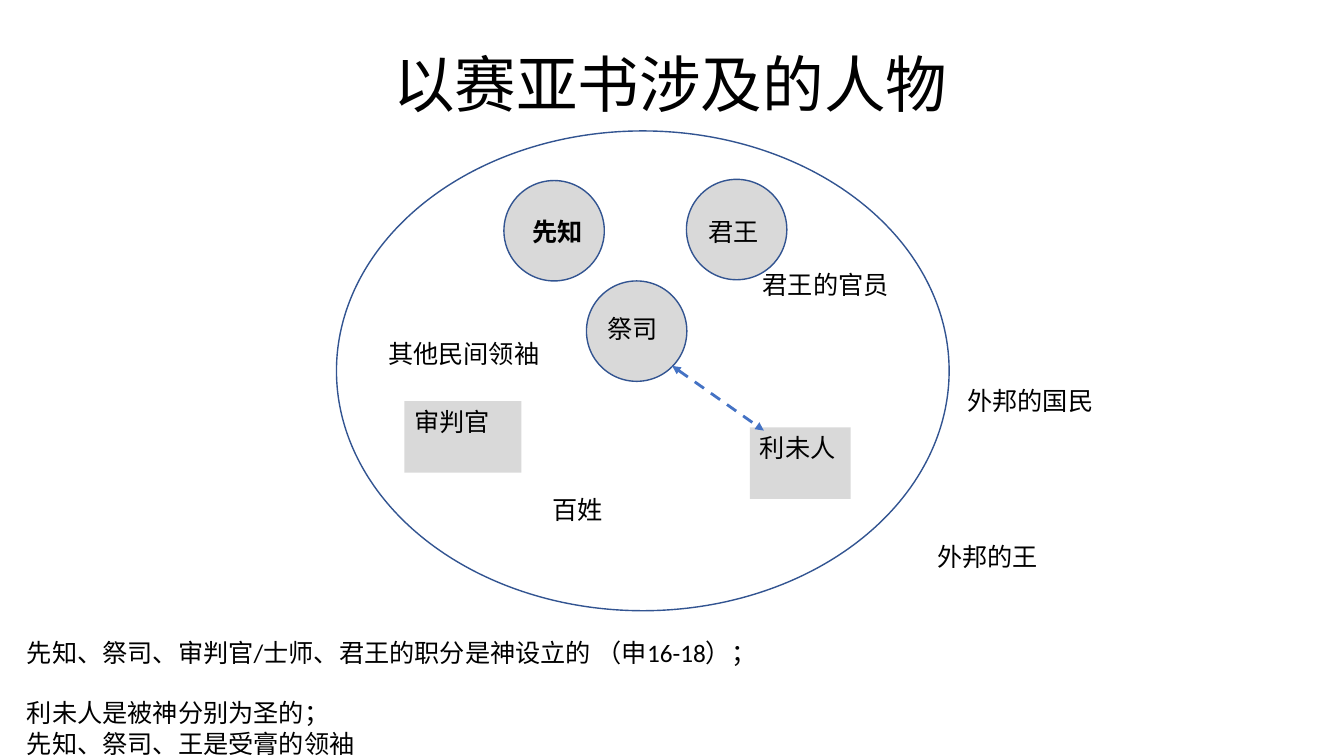
from lxml import etree
from pptx import Presentation
from pptx.dml.color import RGBColor
from pptx.enum.dml import MSO_LINE
from pptx.enum.shapes import MSO_CONNECTOR, MSO_SHAPE
from pptx.enum.text import MSO_ANCHOR, MSO_AUTO_SIZE, PP_ALIGN
from pptx.oxml.ns import qn
from pptx.util import Cm, Pt

BLACK = RGBColor(0x00, 0x00, 0x00)
GREY = RGBColor(0xD9, 0xD9, 0xD9)
NAVY = RGBColor(0x32, 0x54, 0x91)
BLUE = RGBColor(0x44, 0x72, 0xC4)

OVAL, RECTANGLE = MSO_SHAPE.OVAL, MSO_SHAPE.RECTANGLE
STRAIGHT, DASH = MSO_CONNECTOR.STRAIGHT, MSO_LINE.DASH
TOP, LEFT = MSO_ANCHOR.TOP, PP_ALIGN.LEFT
GROW, FIXED = MSO_AUTO_SIZE.SHAPE_TO_FIT_TEXT, MSO_AUTO_SIZE.NONE

TITLE_ONLY = 5
CIRCLE_SIZE = 2.53
LABEL_HEIGHT = 1.02
BLOCK_HEIGHT = 1.8
NOTE_GAP = Pt(21.6)


class PeopleSlide:
    """Style and drawing methods for the current slide."""

    body_font = {"name": "Calibri", "size": Pt(18), "bold": False}
    title_font = {"name": "Arial", "size": Pt(44), "bold": False}

    def __init__(self, deck):
        self.page = deck.slides.add_slide(deck.slide_layouts[TITLE_ONLY])

    def fill_text(self, shape, lines, font, wrap=True, size_rule=FIXED):
        frame = shape.text_frame
        settings = {"word_wrap": wrap, "auto_size": size_rule, "vertical_anchor": TOP}
        for name, value in settings.items():
            setattr(frame, name, value)
        frame.text = "\n".join(lines)
        for para in frame.paragraphs:
            para.alignment = LEFT
            for span in para.runs:
                for name, value in font.items():
                    setattr(span.font, name, value)
                span.font.color.rgb = BLACK
        return frame

    def title(self, text, left, top, width, height):
        box = self.page.shapes.title
        place = {"left": left, "top": top, "width": width, "height": height}
        for name, value in place.items():
            setattr(box, name, Cm(value))
        self.fill_text(box, [text], self.title_font, wrap=False)

    def shape(self, kind, left, top, width, height, fill=None, line=None):
        shape = self.page.shapes.add_shape(
            kind, Cm(left), Cm(top), Cm(width), Cm(height))
        shape.shadow.inherit = False
        if fill is None:
            shape.fill.background()
        else:
            shape.fill.solid()
            shape.fill.fore_color.rgb = fill
        if line is None:
            shape.line.fill.background()
        else:
            shape.line.color.rgb = line
            shape.line.width = Pt(1)
        return shape

    def block(self, text, left, top, width):
        box = self.shape(RECTANGLE, left, top, width, BLOCK_HEIGHT, fill=GREY)
        self.fill_text(box, [text], self.body_font)

    def text(self, lines, left, top, width, height=LABEL_HEIGHT, wrap=False, bold=False):
        box = self.page.shapes.add_textbox(Cm(left), Cm(top), Cm(width), Cm(height))
        return self.fill_text(box, lines, {**self.body_font, "bold": bold}, wrap, GROW)

    def double_arrow(self, *ends):
        arrow = self.page.shapes.add_connector(STRAIGHT, *map(Cm, ends))
        for name, value in {"width": Pt(2), "dash_style": DASH}.items():
            setattr(arrow.line, name, value)
        arrow.line.color.rgb = BLUE
        properties = arrow.element.spPr
        outline = properties.find(qn("a:ln"))
        for end in ("a:headEnd", "a:tailEnd"):
            etree.SubElement(outline, qn(end), type="triangle")
        etree.SubElement(properties, qn("a:effectLst"))


def main():
    deck = Presentation()
    deck.slide_width, deck.slide_height = Cm(33.87), Cm(19.05)
    page = PeopleSlide(deck)

    page.title("以赛亚书涉及的人物", 9.65, 1.04, 14.63, 2.13)

    # The nation and its three anointed offices
    page.shape(OVAL, 8.48, 3.3, 15.44, 12.09, line=NAVY)
    for left, top in ((12.7, 4.55), (14.78, 7.08), (17.3, 4.52)):
        page.shape(OVAL, left, top, CIRCLE_SIZE, CIRCLE_SIZE, GREY, NAVY)
    for name, left, top, bold in (
        ("先知", 13.16, 5.33, True),
        ("祭司", 15.06, 7.77, False),
        ("君王", 17.6, 5.33, False),
    ):
        page.text([name], left, top, CIRCLE_SIZE, wrap=True, bold=bold)

    # Levites, tied to the priests, and judges
    page.block("利未人", 18.9, 10.77, 2.54)
    page.block("审判官", 10.19, 10.11, 2.95)
    page.double_arrow(16.94, 9.22, 19.25, 10.85)

    # Other groups inside and outside the nation
    for name, left, top, width in (
        ("百姓", 13.67, 12.32, 1.8),
        ("其他民间领袖", 9.53, 8.41, 4.37),
        ("君王的官员", 18.97, 6.65, 3.71),
        ("外邦的国民", 24.13, 9.58, 3.71),
        ("外邦的王", 23.37, 13.51, 3.07),
    ):
        page.text([name], left, top, width)

    # Notes below the diagram
    notes = page.text([
        "先知、祭司、审判官/士师、君王的职分是神设立的 （申16-18）；",
        "利未人是被神分别为圣的；",
        "先知、祭司、王是受膏的领袖",
    ], 0.43, 15.93, 19.23, 2.57)
    notes.paragraphs[0].space_after = NOTE_GAP

    deck.save("out.pptx")


if __name__ == "__main__":
    main()
